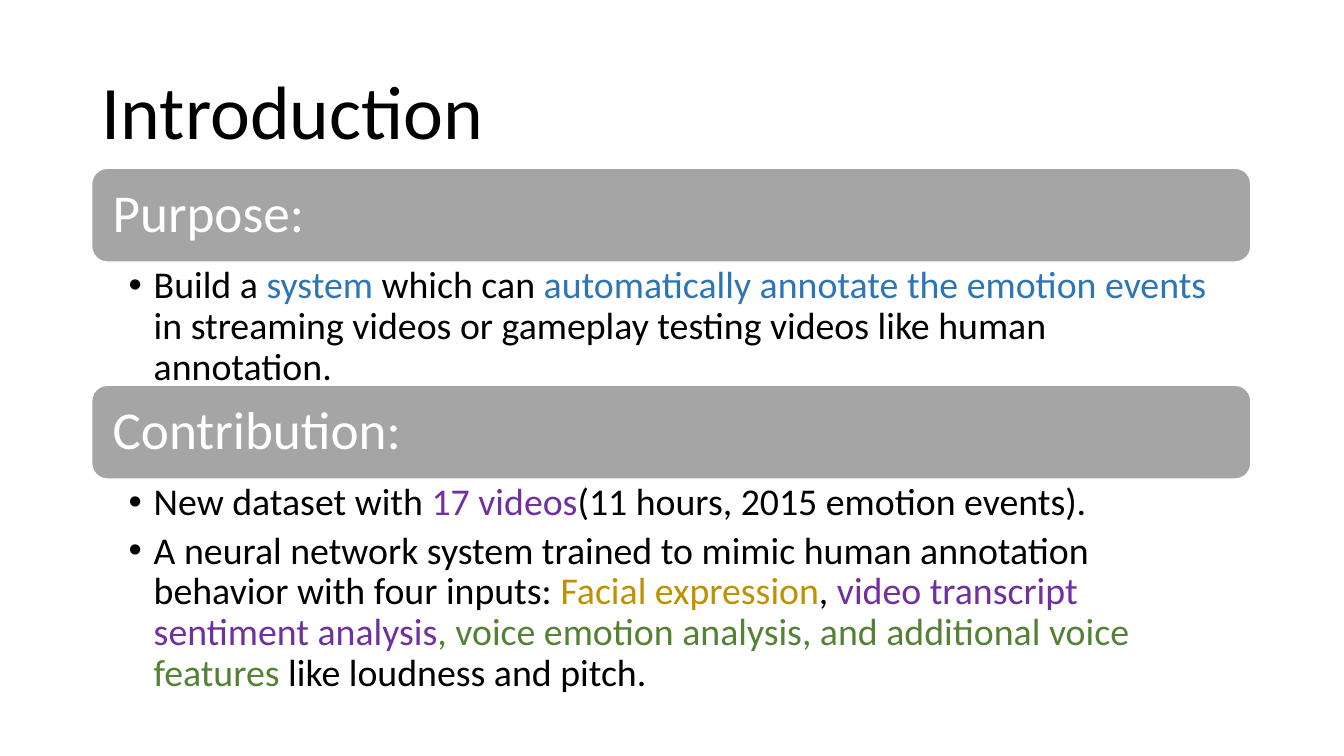
import pptx
import pptx.util
import pptx.dml.color
import pptx.enum.shapes
import pptx.enum.text

Pt = pptx.util.Pt
Anchor = pptx.enum.text.MSO_ANCHOR
Align = pptx.enum.text.PP_ALIGN

COLORS = {
    "black": "000000",
    "white": "FFFFFF",
    "gray": "A5A5A5",
    "blue": "2E75B6",
    "purple": "7030A0",
    "gold": "BF9000",
    "green": "548235",
}

LEFT, WIDTH = 65.5, 828
BAR = 67

PARTS = [
    ("Purpose:", 120.2, 88.5, [
        [("Build a ", "black"),
         ("system", "blue"),
         (" which can ", "black"),
         ("automatically annotate the emotion events ", "blue"),
         ("in streaming videos or gameplay testing videos like human annotation.", "black")],
    ]),
    ("Contribution:", 275.2, 152, [
        [("New dataset with ", "black"),
         ("17 videos", "purple"),
         ("(11 hours, 2015 emotion events).", "black")],
        [("A neural network system trained to mimic human annotation behavior with four inputs: ", "black"),
         ("Facial expression", "gold"),
         (", ", "black"),
         ("video transcript sentiment analysis", "purple"),
         (", voice emotion analysis, and additional voice features", "green"),
         (" like loudness and pitch.", "black")],
    ]),
]


def apply(item, style):
    for name, value in style.items():
        setattr(item, name, value)


def color(name):
    return pptx.dml.color.RGBColor.from_string(COLORS[name])


class Page:
    font = "Calibri"
    frame = {"word_wrap": True, "auto_size": pptx.enum.text.MSO_AUTO_SIZE.NONE}
    para = {"alignment": Align.LEFT, "line_spacing": 0.9, "space_before": Pt(0)}

    def __init__(self, slide):
        self.slide = slide

    def place(self, shape, top, height):
        apply(shape, {"left": Pt(LEFT), "top": Pt(top),
                      "width": Pt(WIDTH), "height": Pt(height)})

    def fill_text(self, shape, lines, size, after=0, **style):
        frame = shape.text_frame
        apply(frame, {**self.frame, **style})
        for i, line in enumerate(lines):
            para = frame.add_paragraph() if i else frame.paragraphs[0]
            apply(para, {**self.para, "space_after": Pt(after)})
            for text, tone in line:
                run = para.add_run()
                run.text = text
                apply(run.font, {"name": self.font, "size": Pt(size)})
                run.font.color.rgb = color(tone)

    def title(self, text):
        shape = self.slide.shapes.title
        self.place(shape, 37.5, 89.3)
        self.fill_text(shape, [[(text, "black")]], 54, vertical_anchor=Anchor.MIDDLE)

    def bar(self, text, top):
        kind = pptx.enum.shapes.MSO_SHAPE.ROUNDED_RECTANGLE
        shape = self.slide.shapes.add_shape(kind, 0, 0, 0, 0)
        self.place(shape, top, BAR)
        shape.shadow.inherit = False
        shape.fill.solid()
        shape.fill.fore_color.rgb = color("gray")
        shape.line.color.rgb = color("white")
        shape.line.width = Pt(1)
        self.fill_text(shape, [[(text, "white")]], 38, vertical_anchor=Anchor.MIDDLE,
                       margin_left=Pt(11.7), margin_right=Pt(11.7))

    def list(self, slot, lines, top, height):
        shape = self.slide.placeholders[slot]
        self.place(shape, top, height)
        self.fill_text(shape, lines, 27, 5.4, vertical_anchor=Anchor.TOP,
                       margin_left=Pt(26.3), margin_right=Pt(15),
                       margin_top=Pt(2.7), margin_bottom=Pt(2.7))
        for para in shape.text_frame.paragraphs:
            props = para._p.get_or_add_pPr()
            props.set("marL", str(Pt(18)))
            props.set("indent", str(-Pt(18)))


def main():
    deck = pptx.Presentation()
    apply(deck, {"slide_width": Pt(960), "slide_height": Pt(540)})
    page = Page(deck.slides.add_slide(deck.slide_layouts[3]))
    page.title("Introduction")
    for slot, (head, top, height, lines) in enumerate(PARTS, 1):
        page.bar(head, top)
        page.list(slot, lines, top + BAR, height)
    deck.save("out.pptx")


if __name__ == "__main__":
    main()
